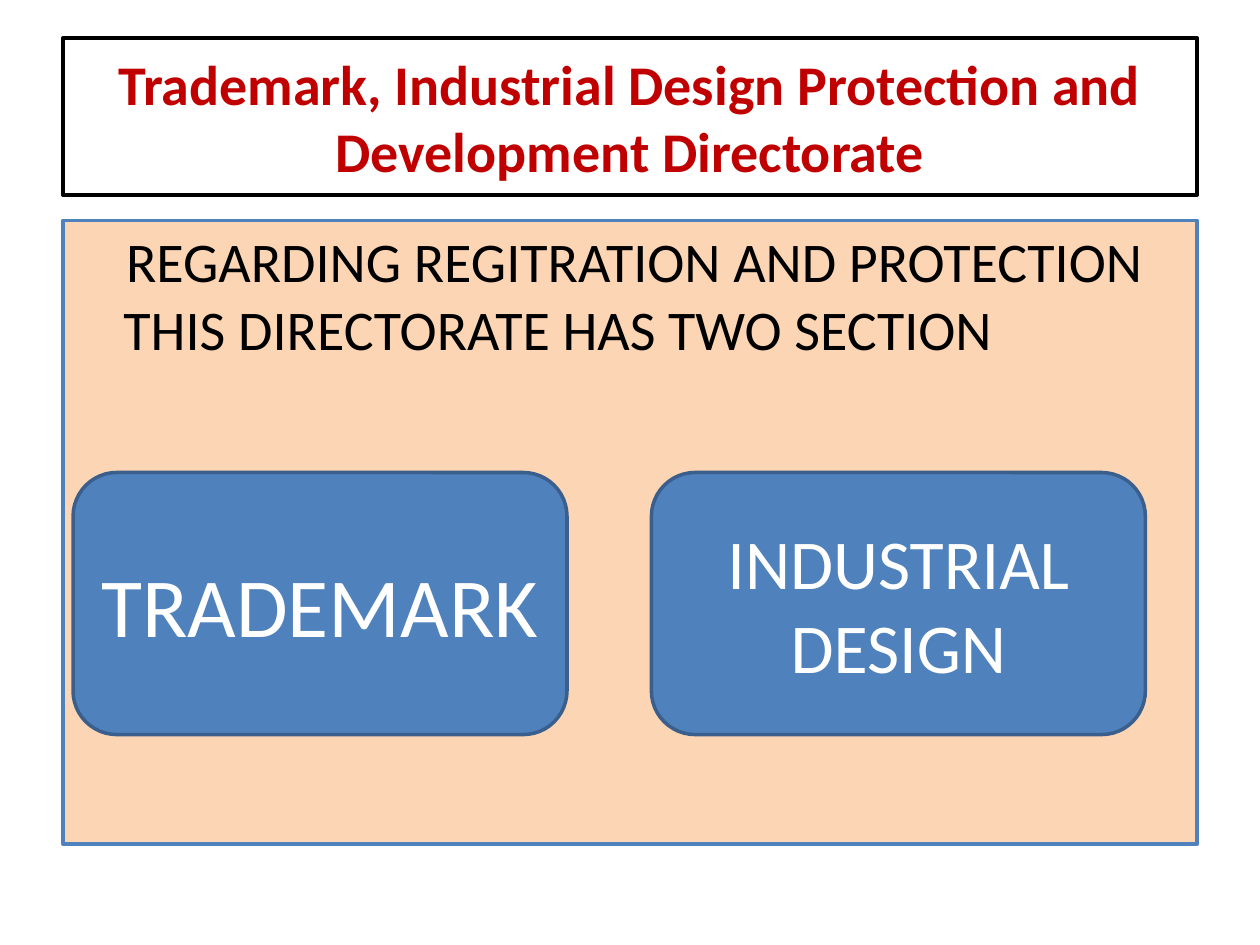
from pptx import Presentation
from pptx.dml.color import RGBColor
from pptx.enum.shapes import MSO_SHAPE
from pptx.enum.text import MSO_ANCHOR, MSO_AUTO_SIZE, PP_ALIGN
from pptx.oxml.ns import qn
from pptx.util import Inches, Pt
from lxml import etree

COLORS = {
    "white": "FFFFFF",
    "black": "000000",
    "red": "C00000",
    "peach": "FCD5B5",
    "blue": "4F81BD",
    "dark_blue": "3A5F8C",
}


def rgb(name):
    return RGBColor.from_string(COLORS[name])


def style_box(sp, box, fill, line):
    sp.left, sp.top, sp.width, sp.height = (Inches(v) for v in box)
    sp.fill.solid()
    sp.fill.fore_color.rgb = rgb(fill)
    sp.line.color.rgb = rgb(line)
    sp.line.width = Pt(2)


def write_text(sp, text, size, color, align, anchor, bold=False):
    tf = sp.text_frame
    tf.word_wrap = True
    tf.auto_size = MSO_AUTO_SIZE.NONE
    tf.vertical_anchor = anchor
    p = tf.paragraphs[0]
    p.alignment = align
    r = p.add_run()
    r.text = text
    r.font.name = "Calibri"
    r.font.size = Pt(size)
    r.font.bold = bold
    r.font.color.rgb = rgb(color)
    return p


def add_title(s, box):
    sp = s.shapes.title
    style_box(sp, box, "white", "black")
    write_text(sp, "Trademark, Industrial Design Protection and Development Directorate",
               32, "red", PP_ALIGN.CENTER, MSO_ANCHOR.MIDDLE, bold=True)


def add_body(s, box):
    sp = s.placeholders[1]
    style_box(sp, box, "peach", "blue")
    p = write_text(sp, "REGARDING REGITRATION AND PROTECTION THIS DIRECTORATE HAS TWO SECTION",
                   32, "black", PP_ALIGN.LEFT, MSO_ANCHOR.TOP)
    p.space_before = Pt(6.4)
    pPr = p._p.get_or_add_pPr()
    pPr.set("marL", str(Inches(0.38)))
    pPr.set("indent", str(Inches(0.02)))
    etree.SubElement(pPr, qn("a:buNone"))


def add_sections(s, box, gap, sections):
    left, top, width, height = box
    card_width = (width - gap * (len(sections) - 1)) / len(sections)
    for i, (text, size) in enumerate(sections):
        sp = s.shapes.add_shape(MSO_SHAPE.ROUNDED_RECTANGLE, 0, 0, 0, 0)
        sp.shadow.inherit = False
        style_box(sp, (left + i * (card_width + gap), top, card_width, height),
                  "blue", "dark_blue")
        write_text(sp, text, size, "white", PP_ALIGN.CENTER, MSO_ANCHOR.MIDDLE)


def main():
    prs = Presentation()
    prs.slide_width, prs.slide_height = Inches(10), Inches(7.5)
    s = prs.slides.add_slide(prs.slide_layouts[1])
    add_title(s, (0.5, 0.3, 9, 1.25))
    add_body(s, (0.5, 1.75, 9, 4.95))
    add_sections(s, (0.58, 3.75, 8.51, 2.08), 0.67,
                 [("TRADEMARK", 48), ("INDUSTRIAL DESIGN", 40)])
    prs.save("out.pptx")


if __name__ == "__main__":
    main()
